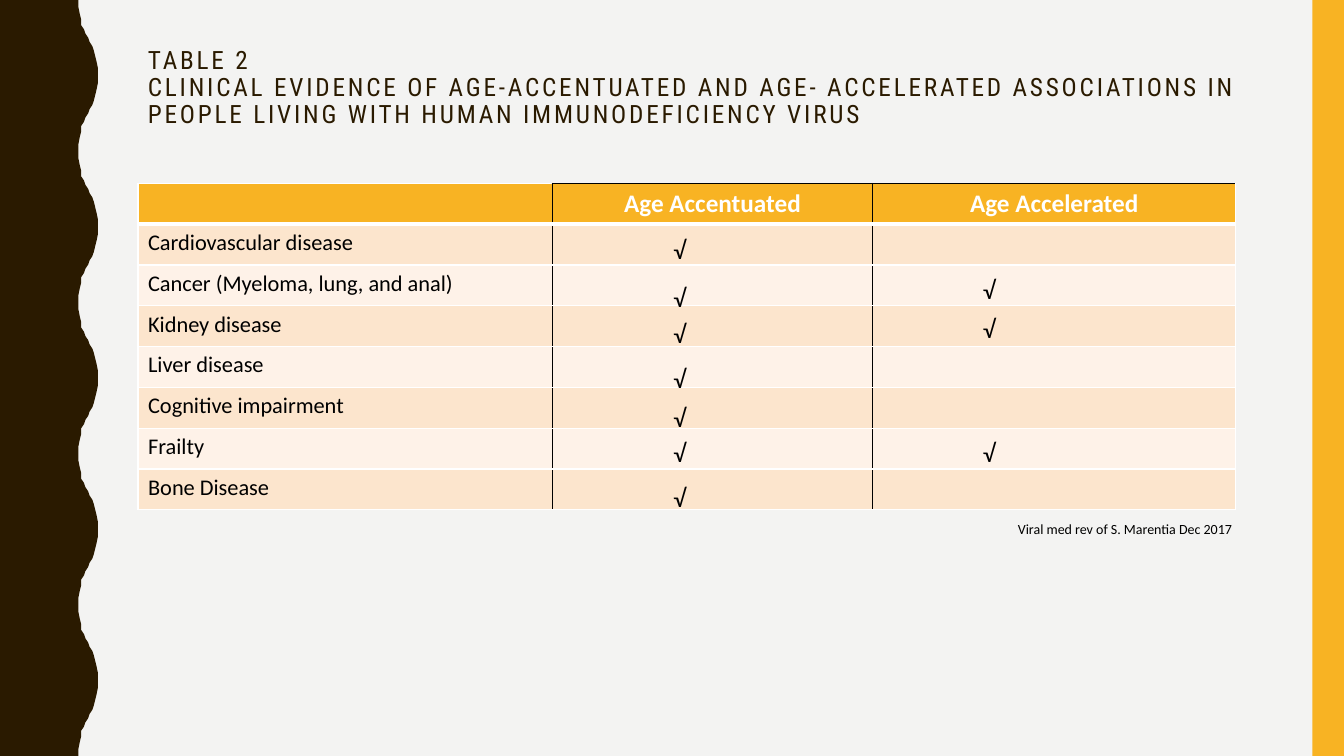
import pptx
import pptx.dml.color
import pptx.enum.shapes
import pptx.enum.text
import pptx.oxml
import pptx.oxml.ns
import pptx.util

Pt = pptx.util.Pt

BROWN, AMBER, BLACK, WHITE = "2A1A00", "F8B323", "000000", "FFFFFF"
BANDS = ("FCE5CD", "FEF2E8")
TITLE = (
    "TABLE 2\vCLINICAL EVIDENCE OF AGE-ACCENTUATED AND AGE- ACCELERATED "
    "ASSOCIATIONS IN PEOPLE LIVING WITH HUMAN IMMUNODEFICIENCY VIRUS"
)
HEADERS = ("", "Age Accentuated", "Age Accelerated")
CONDITIONS = (
    "Cardiovascular disease",
    "Cancer (Myeloma, lung, and anal)",
    "Kidney disease",
    "Liver disease",
    "Cognitive impairment",
    "Frailty",
    "Bone Disease",
)
COLUMN_WIDTHS = (295.9, 229, 259.2)
ROW_HEIGHT = 29.16
TICK_TOPS = {
    382.3: (36.7, 70.6, 96.5, 128.2, 156.2, 181.4, 213.8),
    603.4: (64.8, 92.9, 181.4),
}
WAVE_PERIOD = 108
HALF_WAVE = (
    (56.2, 0), (56.2, 5), (56.9, 10), (57.6, 14.4), (58.3, 18),
    (59.8, 21), (61.2, 24), (62.6, 27), (64.1, 30), (65.5, 33),
    (67, 36), (68.4, 39.6), (69.1, 44), (69.8, 49), (69.8, 54),
)


def color(hex_string):
    return pptx.dml.color.RGBColor.from_string(hex_string)


def paint(part, fill):
    part.fill.solid()
    part.fill.fore_color.rgb = color(fill)


def finish_shape(shape, fill):
    paint(shape, fill)
    shape.line.fill.background()
    shape.shadow.inherit = False


def style_paragraph(paragraph, size, ink, face="Calibri", bold=False):
    paragraph.font.size = Pt(size)
    paragraph.font.name = face
    paragraph.font.bold = bold
    paragraph.font.color.rgb = color(ink)


def add_text(slide, box, text, size, ink, face="Calibri", inset=None):
    textbox = slide.shapes.add_textbox(*map(Pt, box))
    frame = textbox.text_frame
    frame.word_wrap = True
    if inset is not None:
        frame.margin_left = frame.margin_right = Pt(inset)
        frame.margin_top = frame.margin_bottom = Pt(inset)
    paragraph = frame.paragraphs[0]
    paragraph.text = text
    style_paragraph(paragraph, size, ink, face)
    return paragraph


def add_wave(slide, box):
    left, top, width, height = box
    period = HALF_WAVE + tuple(
        (x, WAVE_PERIOD - y) for x, y in HALF_WAVE[-2:0:-1]
    )
    edge = [
        (left + x, top + start + y)
        for start in range(0, height, WAVE_PERIOD)
        for x, y in period
    ]
    edge += [(left + HALF_WAVE[0][0], top + height), (left, top + height)]
    builder = slide.shapes.build_freeform(left, top, scale=Pt(1))
    builder.add_line_segments(edge, close=True)
    finish_shape(builder.convert_to_shape(), BROWN)


def add_side_bar(slide, box):
    bar = slide.shapes.add_shape(
        pptx.enum.shapes.MSO_SHAPE.RECTANGLE, *map(Pt, box)
    )
    finish_shape(bar, AMBER)


def add_title(slide, box):
    title = add_text(slide, box, TITLE, 18, BROWN, "Roboto Condensed")
    title.line_spacing = 0.9
    title._p.get_or_add_pPr().get_or_add_defRPr().set("spc", "200")


def set_border(cell, side, ink, points):
    border = pptx.oxml.parse_xml(
        f'<a:ln{side} {pptx.oxml.ns.nsdecls("a")} w="{Pt(points)}">'
        f'<a:solidFill><a:srgbClr val="{ink}"/></a:solidFill></a:ln{side}>'
    )
    cell._tc.get_or_add_tcPr().append(border)


def format_cell(cell, row, column):
    header = row == 0
    last = len(HEADERS) - 1
    set_border(cell, "L", BLACK if column > 0 else WHITE, 1)
    set_border(cell, "R", BLACK if column < last else WHITE, 1)
    set_border(cell, "T", BLACK if header and column > 0 else WHITE, 1)
    set_border(cell, "B", WHITE, 3 if row < 2 and header else 1)
    paint(cell, AMBER if header else BANDS[(row - 1) % 2])
    paragraph = cell.text_frame.paragraphs[0]
    if header:
        paragraph.alignment = pptx.enum.text.PP_ALIGN.CENTER
        style_paragraph(paragraph, 18, WHITE, bold=True)
    else:
        style_paragraph(paragraph, 16, BLACK)


def add_evidence_table(slide, box):
    left, top, width, height = box
    rows = [HEADERS] + [(condition, "", "") for condition in CONDITIONS]
    evidence = slide.shapes.add_table(
        len(rows), len(HEADERS), *map(Pt, box)
    ).table
    for column, column_width in zip(evidence.columns, COLUMN_WIDTHS):
        column.width = Pt(column_width)
    for r, texts in enumerate(rows):
        evidence.rows[r].height = Pt(ROW_HEIGHT)
        for c, text in enumerate(texts):
            cell = evidence.cell(r, c)
            cell.text = text
            format_cell(cell, r, c)
    for tick_left, offsets in TICK_TOPS.items():
        for offset in offsets:
            tick_box = (left + tick_left, top + offset, 18, 21.6)
            add_text(slide, tick_box, "√", 18, BLACK, inset=0)


def add_citation(slide, box):
    add_text(slide, box, "Viral med rev of S. Marentia Dec 2017", 10, BLACK)


def main():
    deck = pptx.Presentation()
    deck.slide_width, deck.slide_height = Pt(960), Pt(540)
    slide = deck.slides.add_slide(deck.slide_layouts[6])
    paint(slide.background, "F3F3F2")
    add_wave(slide, (0, 0, 70, 540))
    add_side_bar(slide, (937.5, 0, 22.5, 540))
    add_title(slide, (98.6, 30.2, 801.4, 77.8))
    add_evidence_table(
        slide, (98.6, 131, sum(COLUMN_WIDTHS), 8 * ROW_HEIGHT)
    )
    add_citation(slide, (720, 367.9, 210.2, 19.4))
    deck.save("out.pptx")


if __name__ == "__main__":
    main()
